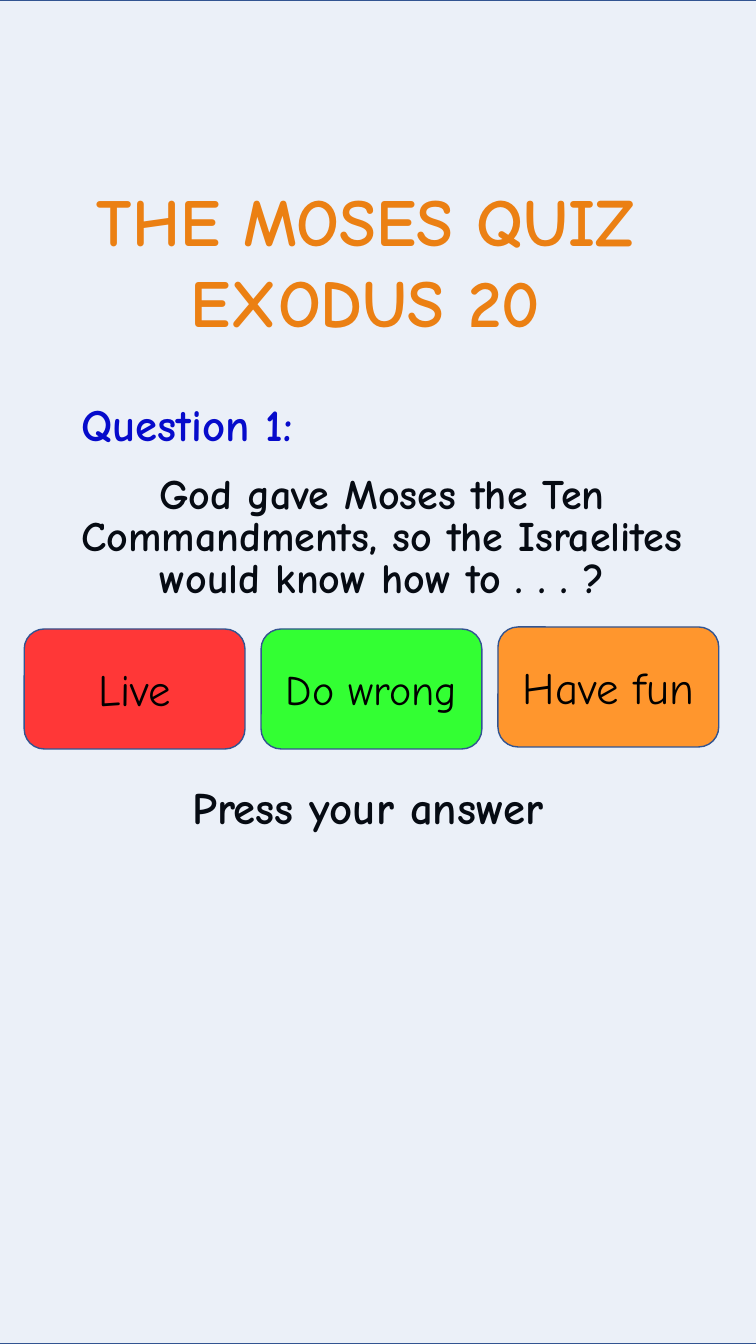
"""Build a portrait quiz slide with a question and three answer buttons."""

from dataclasses import dataclass

from lxml.etree import SubElement
from pptx import Presentation
from pptx.dml.color import RGBColor
from pptx.enum.shapes import MSO_SHAPE
from pptx.enum.text import MSO_ANCHOR, MSO_AUTO_SIZE, PP_ALIGN
from pptx.oxml import parse_xml
from pptx.oxml.ns import nsdecls, qn
from pptx.shapes.autoshape import Shape
from pptx.slide import Slide
from pptx.text.text import TextFrame
from pptx.util import Length, Pt


@dataclass(frozen=True)
class Theme:
    font: str = "Comic Neue"
    title: str = "FF8200"
    rim: str = "FF0000"
    label: str = "0000CC"
    ink: str = "000000"
    tint: str = "4472C4"
    edge: str = "325491"
    red: str = "FF3737"
    green: str = "33FF33"
    orange: str = "FF962D"
    huge: float = 48
    large: float = 32
    body: float = 30


@dataclass(frozen=True)
class Box:
    left: float
    top: float
    width: float
    height: float

    def points(self) -> tuple[Length, ...]:
        return Pt(self.left), Pt(self.top), Pt(self.width), Pt(self.height)


@dataclass(frozen=True)
class Label:
    box: Box
    lines: tuple[str, ...]
    size: float
    color: str
    align: PP_ALIGN = PP_ALIGN.CENTER
    wrap: bool = True
    before: float = 0
    lead: float | Length | None = None
    rim: str | None = None


@dataclass(frozen=True)
class Answer:
    text: str
    fill: str
    size: float
    top: float


THEME = Theme()
WIDTH, HEIGHT = 540, 960
LEFT, STEP = 17.28, 169.2

LABELS = (
    Label(Box(21.6, 124.56, 496.08, 123.84), ("THE MOSES QUIZ ", "EXODUS 20 "),
          THEME.huge, THEME.title, wrap=False, rim=THEME.rim),
    Label(Box(33.84, 280.08, 199.44, 46.08), ("Question 1:",),
          THEME.large, THEME.label, wrap=False),
    Label(Box(11.52, 336.24, 522.72, 100.8),
          ("God gave Moses the Ten Commandments, so the Israelites would know how to . . . ?",),
          THEME.body, THEME.ink, before=7.5, lead=Pt(30)),
    Label(Box(130.32, 558, 303.84, 51.84), ("Press your answer",),
          THEME.large, THEME.ink, align=PP_ALIGN.LEFT, before=7.5, lead=0.9),
)

ANSWERS = (
    Answer("Live", THEME.red, THEME.large, 449.28),
    Answer("Do wrong", THEME.green, THEME.body, 449.28),
    Answer("Have fun", THEME.orange, THEME.large, 447.84),
)


def write(frame: TextFrame, label: Label, bold: bool = True) -> None:
    """Write each line of a label as one paragraph."""
    frame.word_wrap = label.wrap
    for place, text in enumerate(label.lines):
        para = frame.add_paragraph() if place else frame.paragraphs[0]
        para.alignment = label.align
        para.space_before = Pt(label.before)
        para.line_spacing = label.lead
        run = para.add_run()
        run.text = text
        run.font.name = THEME.font
        run.font.size = Pt(label.size)
        run.font.bold = bold
        run.font.color.rgb = RGBColor.from_string(label.color)
        if label.rim:
            run.font.fill.solid()
            run.font.color.rgb = RGBColor.from_string(label.color)
            line = parse_xml(
                f'<a:ln {nsdecls("a")} w="{Pt(1.06)}"><a:solidFill>'
                f'<a:srgbClr val="{label.rim}"/></a:solidFill></a:ln>')
            run.font.fill._xPr.insert(0, line)


def add_label(slide: Slide, label: Label) -> None:
    """Add a text box."""
    frame = slide.shapes.add_textbox(*label.box.points()).text_frame
    write(frame, label)
    frame.auto_size = MSO_AUTO_SIZE.NONE if label.wrap else MSO_AUTO_SIZE.SHAPE_TO_FIT_TEXT


def add_panel(slide: Slide, kind: MSO_SHAPE, box: Box, fill: str) -> Shape:
    """Add a filled shape with the common edge."""
    shape = slide.shapes.add_shape(kind, *box.points())
    shape.shadow.inherit = False
    shape.fill.solid()
    shape.fill.fore_color.rgb = RGBColor.from_string(fill)
    shape.line.color.rgb = RGBColor.from_string(THEME.edge)
    shape.line.width = Pt(1)
    return shape


def add_tint(slide: Slide) -> None:
    """Lay a pale veil over the slide."""
    veil = add_panel(slide, MSO_SHAPE.RECTANGLE, Box(-21.6, 0, 574.56, HEIGHT), THEME.tint)
    color = veil.fill._xPr.find(qn("a:solidFill"))[0]
    SubElement(color, qn("a:alpha"), val="10000")


def add_answer(slide: Slide, answer: Answer, place: int) -> None:
    """Add an answer button at its place in the row."""
    box = Box(LEFT + place * STEP, answer.top, 157.68, 85.68)
    shape = add_panel(slide, MSO_SHAPE.ROUNDED_RECTANGLE, box, answer.fill)
    shape.text_frame.vertical_anchor = MSO_ANCHOR.MIDDLE
    write(shape.text_frame, Label(box, (answer.text,), answer.size, THEME.ink), bold=False)


def main() -> None:
    """Build and save the slide."""
    deck = Presentation()
    deck.slide_width, deck.slide_height = Pt(WIDTH), Pt(HEIGHT)
    slide = deck.slides.add_slide(deck.slide_layouts[6])
    for label in LABELS:
        add_label(slide, label)
    add_tint(slide)
    for place, answer in enumerate(ANSWERS):
        add_answer(slide, answer, place)
    deck.save("out.pptx")


if __name__ == "__main__":
    main()
